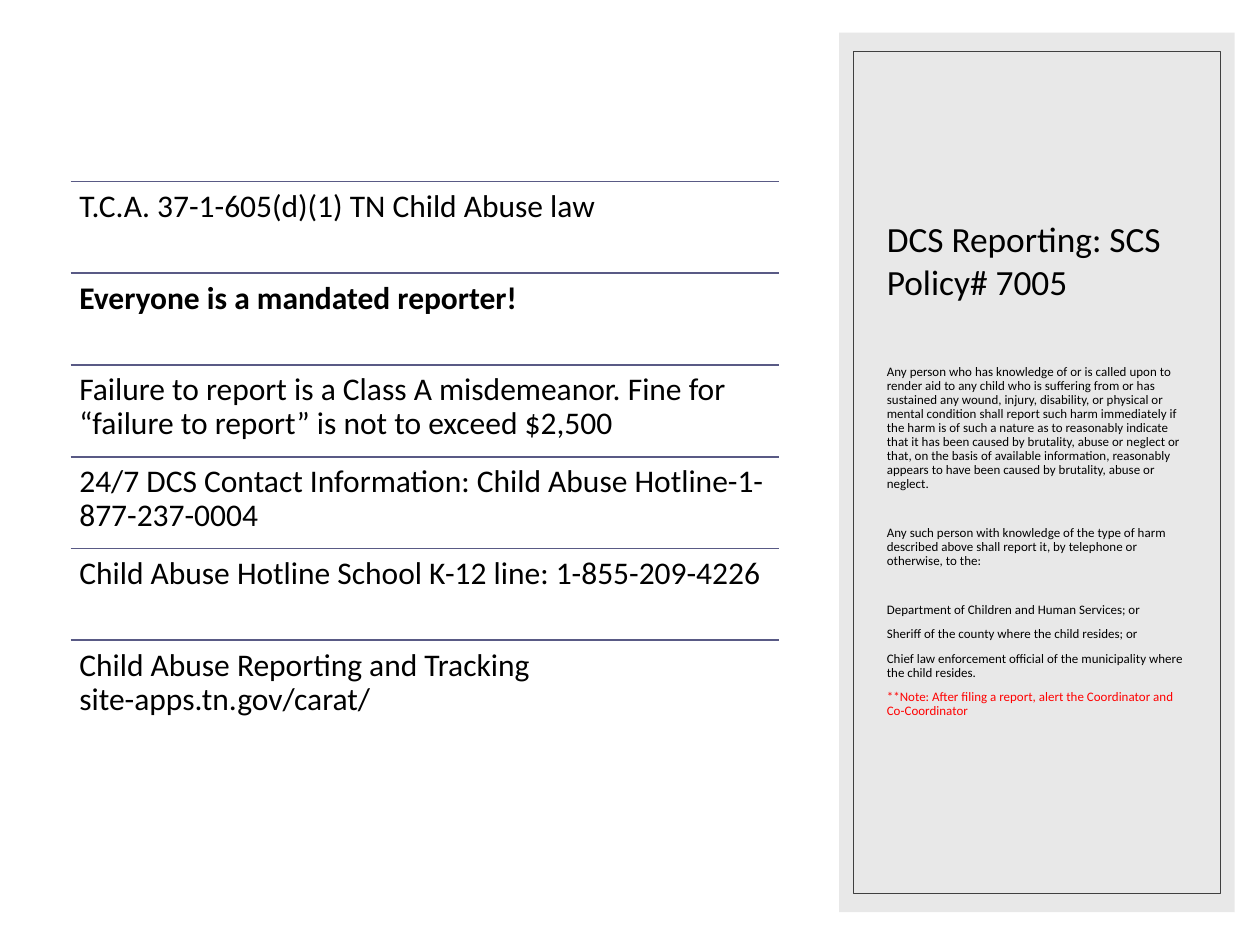
from dataclasses import dataclass

from lxml.etree import SubElement
from pptx import Presentation
from pptx.dml.color import RGBColor
from pptx.enum.shapes import MSO_CONNECTOR, MSO_SHAPE
from pptx.enum.text import MSO_ANCHOR
from pptx.oxml.ns import qn
from pptx.util import Inches, Pt


@dataclass(frozen=True)
class Theme:
    font: str = "Calibri"
    text: str = "000000"
    warning: str = "FF0000"
    rule: str = "595A85"
    panel: str = "D9D9D9"
    frame: str = "404040"
    title_size: float = 20.2
    fact_size: float = 18
    body_size: float = 7.4


@dataclass
class Entry:
    text: str
    bold: bool = False
    color: str = Theme.text
    before: float = 0
    after: float = 0


class SlideBuilder:
    """Places elements on a grid of 100 columns by 100 rows."""

    def __init__(self, presentation, theme):
        self.theme = theme
        self.column = presentation.slide_width / 100
        self.row = presentation.slide_height / 100
        self.slide = presentation.slides.add_slide(presentation.slide_layouts[6])

    def place(self, left, top, width, height):
        return (round(left * self.column), round(top * self.row),
                round(width * self.column), round(height * self.row))

    def rectangle(self, box, fill=None, opacity=100, line=None):
        shape = self.slide.shapes.add_shape(MSO_SHAPE.RECTANGLE, *self.place(*box))
        shape.shadow.inherit = False
        if fill:
            shape.fill.solid()
            shape.fill.fore_color.rgb = RGBColor.from_string(fill)
            color = shape.fill._xPr.find(qn("a:solidFill"))[0]
            SubElement(color, qn("a:alpha"), val=str(opacity * 1000))
        else:
            shape.fill.background()
        if line:
            shape.line.color.rgb = RGBColor.from_string(line)
            shape.line.width = Pt(0.5)
        else:
            shape.line.fill.background()

    def rule(self, left, top, width):
        x, y, length, _ = self.place(left, top, width, 0)
        connector = self.slide.shapes.add_connector(
            MSO_CONNECTOR.STRAIGHT, x, y, x + length, y)
        connector.line.color.rgb = RGBColor.from_string(self.theme.rule)
        connector.line.width = Pt(1)
        SubElement(connector._element.spPr, qn("a:effectLst"))

    def text(self, box, entries, size, spacing=0.9, margins=(0.1, 0.05),
             anchor=MSO_ANCHOR.TOP):
        frame = self.slide.shapes.add_textbox(*self.place(*box)).text_frame
        frame.word_wrap = True
        frame.vertical_anchor = anchor
        frame.margin_left = frame.margin_right = Inches(margins[0])
        frame.margin_top = frame.margin_bottom = Inches(margins[1])
        for index, entry in enumerate(entries):
            paragraph = frame.add_paragraph() if index else frame.paragraphs[0]
            paragraph.line_spacing = spacing
            paragraph.space_before = Pt(entry.before)
            paragraph.space_after = Pt(entry.after)
            run = paragraph.add_run()
            run.text = entry.text
            run.font.name = self.theme.font
            run.font.size = Pt(size)
            run.font.bold = entry.bold
            run.font.color.rgb = RGBColor.from_string(entry.color)


FACTS = [
    Entry("T.C.A. 37-1-605(d)(1) TN Child Abuse law", after=6),
    Entry("Everyone is a mandated reporter!", bold=True, after=6),
    Entry("Failure to report is a Class A misdemeanor. Fine for “failure to "
          "report” is not to exceed $2,500", after=6),
    Entry("24/7 DCS Contact Information: Child Abuse Hotline-1-877-237-0004", after=6),
    Entry("Child Abuse Hotline School K-12 line: 1-855-209-4226", after=6),
    Entry("Child Abuse Reporting and Tracking site-apps.tn.gov/carat/", after=6),
]

POLICY = [
    Entry("Any person who has knowledge of or is called upon to render aid to any "
          "child who is suffering from or has sustained any wound, injury, "
          "disability, or physical or mental condition shall report such harm "
          "immediately if the harm is of such a nature as to reasonably indicate "
          "that it has been caused by brutality, abuse or neglect or that, on the "
          "basis of available information, reasonably appears to have been caused "
          "by brutality, abuse or neglect."),
    Entry("Any such person with knowledge of the type of harm described above "
          "shall report it, by telephone or otherwise, to the:", before=20),
    Entry("Department of Children and Human Services; or", before=20),
    Entry("Sheriff of the county where the child resides; or", before=6),
    Entry("Chief law enforcement official of the municipality where the child "
          "resides.", before=6),
    Entry("**Note: After filing a report, alert the Coordinator and "
          "Co-Coordinator", color=Theme.warning, before=6),
]


def main():
    presentation = Presentation()
    presentation.slide_width = Inches(10)
    presentation.slide_height = Inches(7.5)
    theme = Theme()
    builder = SlideBuilder(presentation, theme)

    # Side panel with its inner frame
    builder.rectangle((66.6, 3.47, 31.4, 93.07), fill=theme.panel, opacity=60)
    builder.rectangle((67.7, 5.47, 29.2, 89.07), line=theme.frame)

    # Policy title and wording
    builder.text((69.4, 19.2, 25.9, 13.47), [Entry("DCS Reporting: SCS Policy# 7005")],
                 theme.title_size, spacing=1, anchor=MSO_ANCHOR.BOTTOM)
    builder.text((69.4, 38, 25.9, 39.47), POLICY, theme.body_size)

    # Ruled list of facts
    left, first_top, width, pitch = 5.6, 19.2, 56.25, 9.71
    for index, fact in enumerate(FACTS):
        top = first_top + index * pitch
        builder.rule(left, top, width)
        builder.text((left, top, width, pitch), [fact], theme.fact_size,
                     margins=(0.07, 0.07))

    presentation.save("out.pptx")


if __name__ == "__main__":
    main()
